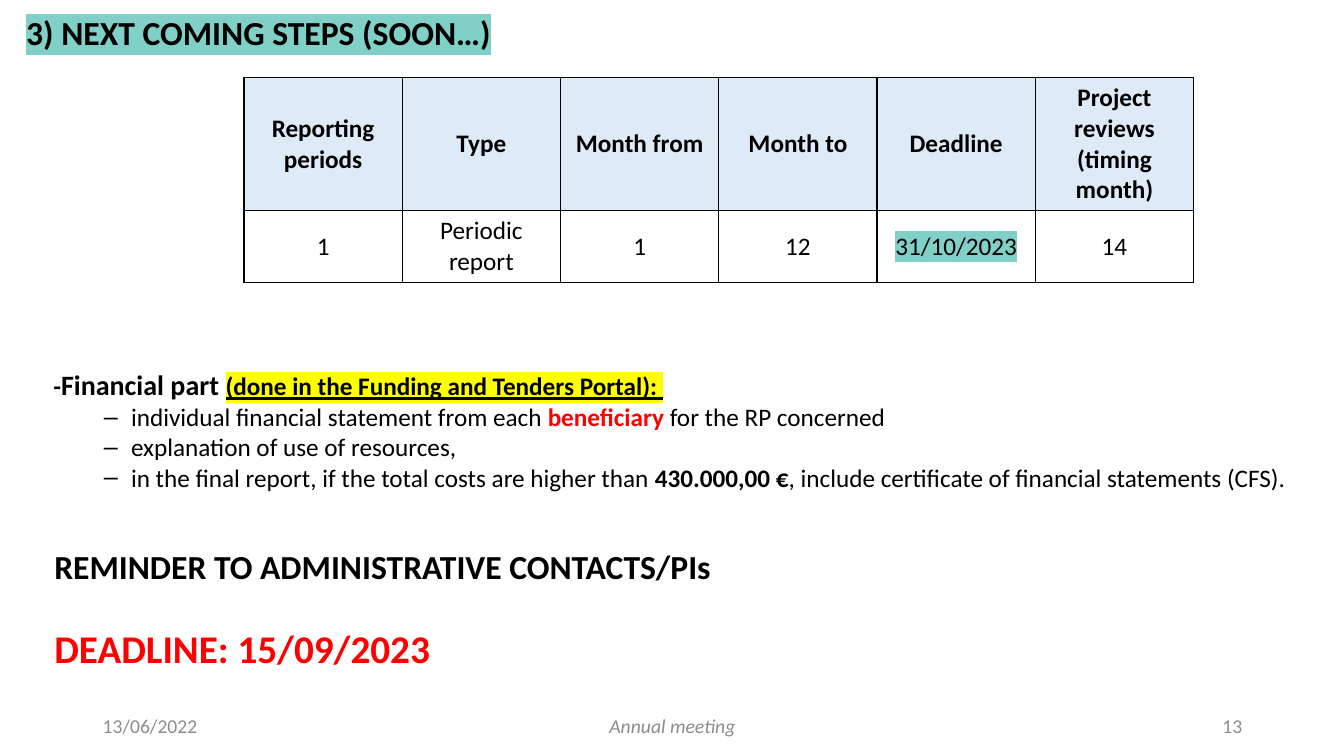
from lxml.etree import SubElement
from pptx import Presentation
from pptx.dml.color import RGBColor
from pptx.enum.text import MSO_ANCHOR, MSO_AUTO_SIZE, PP_ALIGN
from pptx.oxml import parse_xml
from pptx.oxml.ns import nsdecls, qn
from pptx.util import Inches, Pt

BLACK = RGBColor(0x00, 0x00, 0x00)
RED = RGBColor(0xFF, 0x00, 0x00)
GREY = RGBColor(0x8C, 0x8C, 0x8C)
TEAL = RGBColor(0x80, 0xD0, 0xC7)
YELLOW = RGBColor(0xFF, 0xFF, 0x00)
PALE_BLUE = RGBColor(0xDE, 0xEB, 0xF7)


def write(p, text, size=18, color=BLACK, bold=False, italic=False,
          underline=False, highlight=None, align=PP_ALIGN.LEFT):
    """Add one formatted run to the paragraph."""
    p.alignment = align
    r = p.add_run()
    r.text = text
    font = r.font
    font.size = Pt(size)
    font.bold, font.italic, font.underline = bold, italic, underline
    font.color.rgb = color
    if highlight is not None:
        fill = r._r.rPr.find(qn("a:solidFill"))
        fill.addnext(parse_xml(
            f'<a:highlight {nsdecls("a")}><a:srgbClr val="{highlight}"/></a:highlight>'))
    font.name = "Calibri"


prs = Presentation()
prs.slide_width, prs.slide_height = Inches(13.33), Inches(7.5)
s = prs.slides.add_slide(prs.slide_layouts[1])

# Title
title = s.shapes.title
title.left, title.top, title.width, title.height = map(Inches, (0.16, 0.07, 6, 0.5))
tf = title.text_frame
tf.auto_size = MSO_AUTO_SIZE.NONE
write(tf.paragraphs[0], "3) NEXT COMING STEPS (SOON…)", size=24, bold=True, highlight=TEAL)

# Reporting table
rows = [
    ["Reporting periods", "Type", "Month from", "Month to", "Deadline",
     "Project reviews (timing month)"],
    ["1", "Periodic report", "1", "12", "31/10/2023", "14"],
]
table = s.shapes.add_table(2, 6, Inches(2.42), Inches(0.77), Inches(9.41), Inches(2)).table
table.first_row = table.horz_banding = False
for col in table.columns:
    col.width = Inches(1.57)
table.rows[0].height, table.rows[1].height = Inches(1.3), Inches(0.7)
for i, row in enumerate(rows):
    for j, text in enumerate(row):
        cell = table.cell(i, j)
        cell.vertical_anchor = MSO_ANCHOR.MIDDLE
        if i == 0:
            cell.fill.solid()
            cell.fill.fore_color.rgb = PALE_BLUE
        else:
            cell.fill.background()
        for k, side in enumerate(("lnL", "lnR", "lnT", "lnB")):
            cell._tc.tcPr.insert(k, parse_xml(
                f'<a:{side} {nsdecls("a")} w="12700"><a:solidFill>'
                f'<a:srgbClr val="{BLACK}"/></a:solidFill></a:{side}>'))
        write(cell.text_frame.paragraphs[0], text, bold=i == 0, align=PP_ALIGN.CENTER,
              highlight=TEAL if text == "31/10/2023" else None)

# Financial part
body = s.placeholders[1]
body.left, body.top, body.width, body.height = map(Inches, (0.43, 3.6, 12.63, 1.65))
tf = body.text_frame
tf.auto_size = MSO_AUTO_SIZE.NONE
p = tf.paragraphs[0]
p.space_before = Pt(0)
pPr = p._p.get_or_add_pPr()
pPr.set("marL", "0")
pPr.set("indent", "0")
SubElement(pPr, qn("a:buNone"))
write(p, "-", bold=True)
write(p, "Financial part ", size=20, bold=True)
write(p, "(done in the Funding and Tenders Portal): ", bold=True, underline=True,
      highlight=YELLOW)

items = [
    [("individual financial statement from each ", {}),
     ("beneficiary ", {"bold": True, "color": RED}),
     ("for the RP concerned", {})],
    [("explanation of use of resources,", {})],
    [("in the final report, if the total costs are higher than ", {}),
     ("430.000,00 €", {"bold": True}),
     (", include certificate of financial statements (CFS).", {})],
]
for item in items:
    p = tf.add_paragraph()
    p.level = 1
    p.space_before = Pt(0)
    pPr = p._p.get_or_add_pPr()
    pPr.set("marL", str(Inches(0.77)))
    pPr.set("indent", str(Inches(-0.27)))
    for text, style in item:
        write(p, text, align=PP_ALIGN.JUSTIFY, **style)

# Reminder and footer
footer = {"size": 14, "color": GREY}
labels = [
    ("REMINDER TO ADMINISTRATIVE CONTACTS/PIs", (0.44, 5.37, 7.5, 0.5),
     {"size": 24, "bold": True}),
    ("DEADLINE: 15/09/2023", (0.44, 6.14, 5, 0.57),
     {"size": 28, "bold": True, "color": RED}),
    ("13/06/2022", (0.92, 7, 3, 0.4), footer),
    ("Annual meeting", (4.42, 7, 4.5, 0.4),
     {**footer, "italic": True, "align": PP_ALIGN.CENTER}),
    ("13", (9.42, 7, 3, 0.4), {**footer, "align": PP_ALIGN.RIGHT}),
]
for text, box, style in labels:
    tf = s.shapes.add_textbox(*map(Inches, box)).text_frame
    tf.word_wrap = True
    tf.vertical_anchor = MSO_ANCHOR.MIDDLE
    write(tf.paragraphs[0], text, **style)

prs.save("out.pptx")
